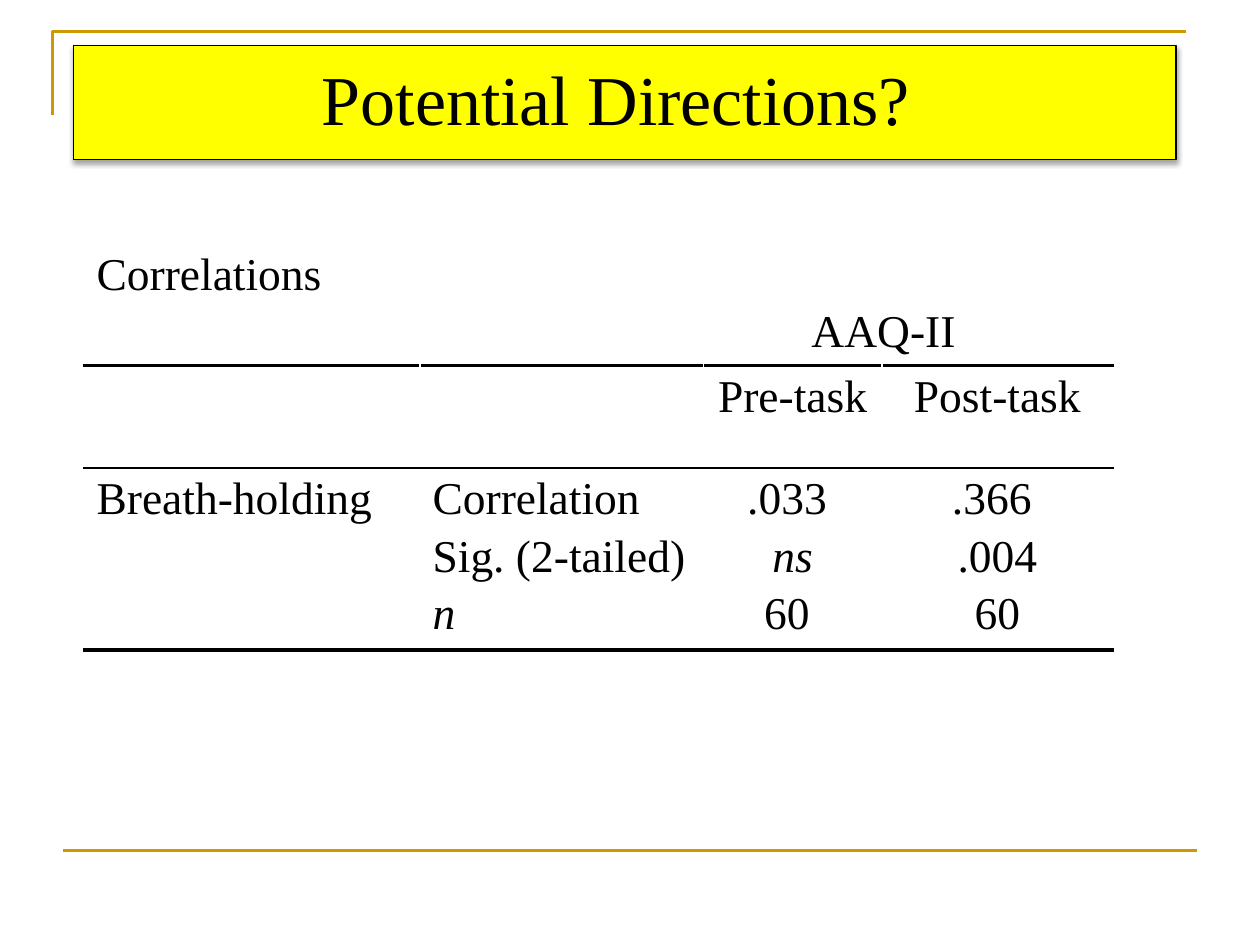
from lxml.etree import SubElement
from pptx import Presentation
from pptx.dml.color import RGBColor
from pptx.enum.shapes import MSO_CONNECTOR
from pptx.enum.text import MSO_ANCHOR, MSO_AUTO_SIZE, PP_ALIGN
from pptx.oxml import parse_xml
from pptx.oxml.ns import nsdecls, qn
from pptx.util import Pt

BLACK = RGBColor(0, 0, 0)
GOLD = RGBColor(0xCC, 0x99, 0x00)
YELLOW = RGBColor(0xFF, 0xFF, 0x00)
FONT = "Times New Roman"
COLS = [192, 162, 102, 132]
ROWS = [70, 58.4, 104, 58.4]
RULES = [0, 2.25, 1, 2.25, 0]
GAP = 4.1
HEADS = {2: "Pre-task", 3: "Post-task"}
BODY = [
    ["Breath-holding"],
    ["Correlation", "Sig. (2-tailed)", "n"],
    [".033 ", "ns", "60 "],
    [".366 ", ".004", "60"],
]


def write(frame, lines, size=26, align=PP_ALIGN.LEFT, before=GAP, pitch=None):
    for i, line in enumerate(lines):
        para = frame.paragraphs[0] if i == 0 else frame.add_paragraph()
        para.alignment = align
        para.space_before = Pt(before if i else 0)
        if pitch:
            para.line_spacing = pitch
        run = para.add_run()
        run.text = line
        run.font.name = FONT
        run.font.size = Pt(size)
        run.font.color.rgb = BLACK
        run.font.italic = line in ("n", "ns")


def frame_lines(slide):
    build = slide.shapes.build_freeform(30, 66, scale=Pt(1))
    build.add_line_segments([(30, 18), (678, 18)], close=False)
    edge = build.convert_to_shape()
    edge.shadow.inherit = False
    edge.fill.background()
    base = slide.shapes.add_connector(
        MSO_CONNECTOR.STRAIGHT, Pt(36), Pt(486), Pt(684), Pt(486))
    SubElement(base.element.spPr, qn("a:effectLst"))
    for item in (edge, base):
        item.line.color.rgb = GOLD
        item.line.width = Pt(1.5)


def title_box(slide):
    box = slide.shapes.title
    box.left, box.top, box.width, box.height = Pt(42), Pt(26), Pt(630), Pt(65)
    box.fill.solid()
    box.fill.fore_color.rgb = YELLOW
    box.line.color.rgb = BLACK
    box.line.width = Pt(0.75)
    box.element.spPr.append(parse_xml(
        f'<a:effectLst {nsdecls("a")}><a:outerShdw blurRad="{Pt(3.1)}" '
        f'dist="{Pt(1.8)}" dir="5400000" rotWithShape="0">'
        '<a:srgbClr val="000000"><a:alpha val="35000"/></a:srgbClr>'
        '</a:outerShdw></a:effectLst>'))
    frame = box.text_frame
    frame.word_wrap = True
    frame.auto_size = MSO_AUTO_SIZE.NONE
    frame.vertical_anchor = MSO_ANCHOR.MIDDLE
    frame.margin_left = frame.margin_right = Pt(22)
    frame.margin_top = frame.margin_bottom = Pt(22)
    write(frame, ["Potential Directions? "], size=40,
          align=PP_ALIGN.CENTER, pitch=0.9)


def rule(cell, row):
    cell.fill.background()
    props = cell._tc.get_or_add_tcPr()
    for i, tag in enumerate(("lnT", "lnB")):
        width = RULES[row + i]
        paint = ('<a:solidFill><a:srgbClr val="000000"/></a:solidFill>'
                 if width else "<a:noFill/>")
        props.insert(i, parse_xml(
            f'<a:{tag} {nsdecls("a")} w="{Pt(width)}">{paint}</a:{tag}>'))


def data_table(slide):
    table = slide.shapes.add_table(
        len(ROWS), len(COLS), Pt(48), Pt(139), Pt(sum(COLS)), Pt(sum(ROWS))).table
    table.first_row = table.horz_banding = False
    for col, width in zip(table.columns, COLS):
        col.width = Pt(width)
    for i, height in enumerate(ROWS):
        table.rows[i].height = Pt(height)
        for j in range(len(COLS)):
            rule(table.cell(i, j), i)
    for i in (0, 3):
        table.cell(i, 0).merge(table.cell(i, 3))
    top = table.cell(0, 0).text_frame
    write(top, ["Correlations", "AAQ-II"])
    top.paragraphs[1]._p.get_or_add_pPr().set("marL", str(Pt(408.5)))
    for j, head in HEADS.items():
        write(table.cell(1, j).text_frame, [head], align=PP_ALIGN.CENTER)
    for j, lines in enumerate(BODY):
        align = PP_ALIGN.CENTER if j in HEADS else PP_ALIGN.LEFT
        write(table.cell(2, j).text_frame, lines, align=align)


def main():
    deck = Presentation()
    deck.slide_width, deck.slide_height = Pt(720), Pt(540)
    slide = deck.slides.add_slide(deck.slide_layouts[5])
    frame_lines(slide)
    title_box(slide)
    data_table(slide)
    deck.save("out.pptx")


if __name__ == "__main__":
    main()
